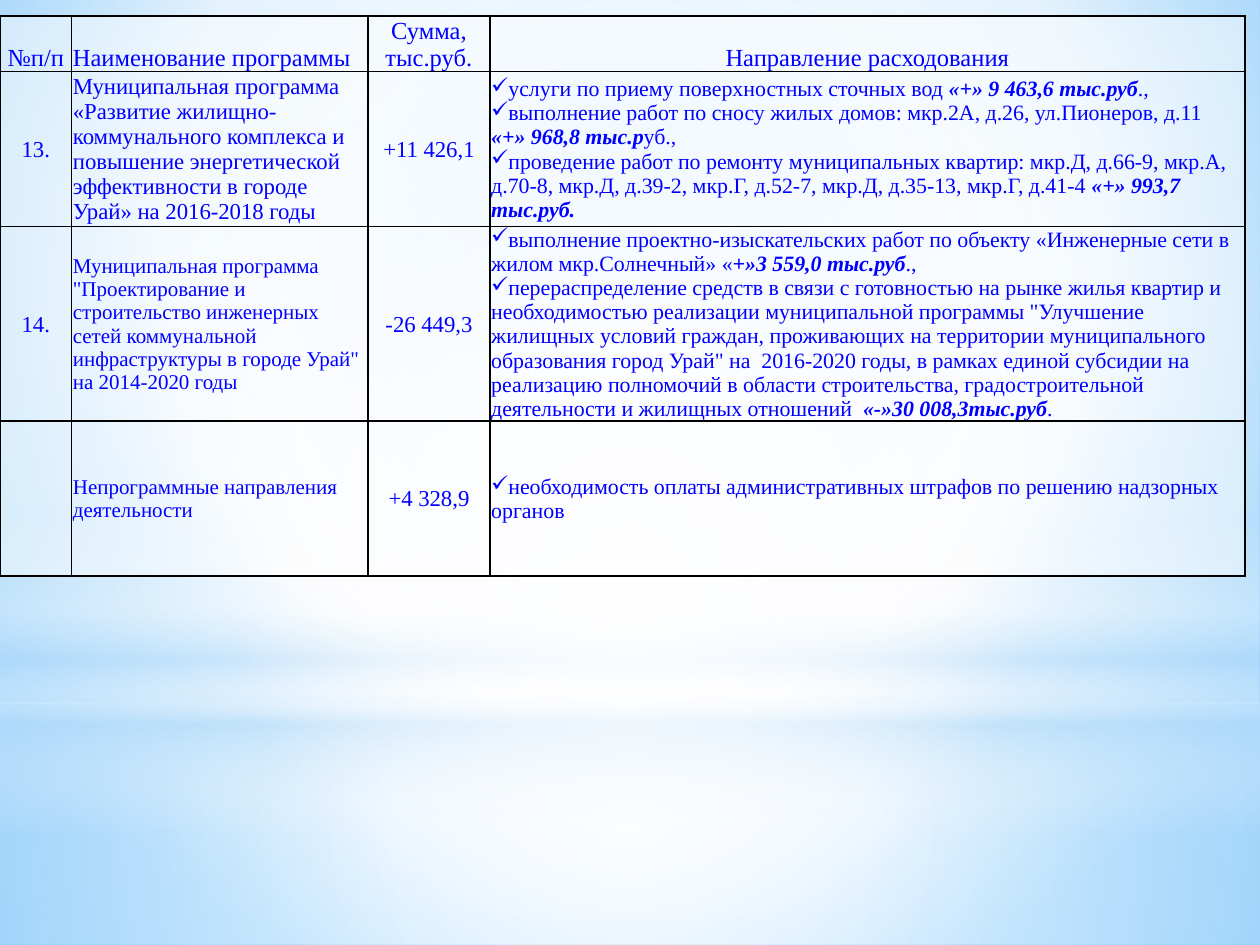
"""Build a budget slide: a table of programme changes on a soft blue backdrop."""
from dataclasses import dataclass

from lxml import etree
from pptx import Presentation
from pptx import util as u
from pptx.dml.color import RGBColor
from pptx.enum import shapes, text
from pptx.oxml import ns

Pt = u.Pt


@dataclass(frozen=True)
class Theme:
    font: str = "Times New Roman"
    ink: str = "0000FF"
    rule: str = "000000"
    white: str = "FFFFFF"
    haze: str = "B4DCFA"
    sky: str = "9ED5FF"
    deep: str = "5BB9FF"
    head: float = 14
    body: float = 13
    note: float = 12.5
    small: float = 12
    veil: int = 46


look = Theme()


def add(node, tag, **attrs):
    """Append a drawing element with the given attributes."""
    return etree.SubElement(node, ns.qn("a:" + tag), {k: str(v) for k, v in attrs.items()})


def blend(fill, root, stops, rect=None):
    """Give a fill a gradient: round within rect, or top to bottom."""
    fill.gradient()
    grad = root.find(".//" + ns.qn("a:gradFill"))
    for child in list(grad):
        grad.remove(child)
    chain = add(grad, "gsLst")
    for spot, tint, alpha in stops:
        color = add(add(chain, "gs", pos=spot * 1000), "srgbClr", val=tint)
        add(color, "alpha", val=alpha * 1000)
    if rect:
        way = add(grad, "path", path="circle")
        add(way, "fillToRect", **{side: part * 1000 for side, part in zip("ltrb", rect)})
    else:
        add(grad, "lin", ang=90 * 60000, scaled=0)


deck = Presentation()
deck.slide_width, deck.slide_height = Pt(720), Pt(540)
slide = deck.slides.add_slide(deck.slide_layouts[6])
blend(slide.background.fill, slide.element,
      [(0, look.sky, 100), (60, look.white, 100), (100, look.deep, 100)], (20, 10, 20, 60))

mid = (50, 50, 50, 50)
box, oval = shapes.MSO_SHAPE.RECTANGLE, shapes.MSO_SHAPE.OVAL
layers = [
    (box, 401.76, 138.24, mid, [(0, look.white, 91), (37, look.white, 76), (100, look.haze, 79)]),
    (box, 0, 401.76, mid, [(0, look.white, 89), (48, look.white, 62), (100, look.haze, 79)]),
    (box, 296.64, 180, None, [(0, look.white, 0), (29, look.white, 30), (45, look.haze, 40),
                              (55, look.white, 26), (65, look.haze, 60), (100, look.white, 0)]),
    (oval, 126, 401.76, mid, [(0, look.white, 100), (56, look.white, 0)]),
]
for kind, top, height, rect, stops in layers:
    layer = slide.shapes.add_shape(kind, 0, Pt(top), Pt(720), Pt(height))
    layer.shadow.inherit = False
    layer.line.fill.background()
    blend(layer.fill, layer.element, stops, rect)

heads = ["№п/п", "Наименование программы", "Сумма, тыс.руб.", "Направление расходования"]
items = [
    ("13.", "Муниципальная программа «Развитие жилищно-коммунального комплекса и повышение "
     "энергетической эффективности в городе Урай» на 2016-2018 годы", look.body, "+11 426,1", [
         ("услуги по приему поверхностных сточных вод ", "«+» 9 463,6 тыс.руб", ".,"),
         ("выполнение работ по сносу жилых домов: мкр.2А, д.26, ул.Пионеров, д.11  ",
          "«+» 968,8 тыс.р", "уб.,"),
         ("проведение работ по ремонту муниципальных квартир: мкр.Д, д.66-9, мкр.А, д.70-8, "
          "мкр.Д, д.39-2, мкр.Г, д.52-7, мкр.Д, д.35-13, мкр.Г, д.41-4 ",
          "«+» 993,7 тыс.руб.")]),
    ("14.", 'Муниципальная программа "Проектирование и строительство инженерных сетей '
     'коммунальной инфраструктуры в городе Урай" на 2014-2020 годы', look.small, "-26 449,3", [
         ("выполнение проектно-изыскательских работ по объекту «Инженерные сети в жилом "
          "мкр.Солнечный» «", "+»3 559,0 тыс.руб", ".,"),
         ("перераспределение средств в связи с готовностью на рынке жилья квартир и "
          'необходимостью реализации муниципальной программы "Улучшение жилищных условий '
          'граждан, проживающих на территории муниципального образования город Урай" на  '
          "2016-2020 годы, в рамках единой субсидии на реализацию полномочий в области "
          "строительства, градостроительной деятельности и жилищных отношений  ",
          "«-»30 008,3тыс.руб", ".")]),
    ("", "Непрограммные направления деятельности", look.small, "+4 328,9", [
        ("необходимость оплаты административных штрафов по решению надзорных органов",)]),
]
rows = [[([(head,)], look.head) for head in heads]]
for mark, name, size, sum_, goals in items:
    rows.append([([(mark,)], look.body), ([(name,)], size),
                 ([(sum_,)], look.body), (goals, look.note)])

wide, tall = [41, 169.2, 69.84, 431.3], [28, 88.56, 88.56, 88.56]
table = slide.shapes.add_table(len(tall), len(wide), 0, Pt(9.2), Pt(sum(wide)), Pt(sum(tall))).table
table.first_row = table.horz_banding = False
for col, width in zip(table.columns, wide):
    col.width = Pt(width)
for row, height in zip(table.rows, tall):
    row.height = Pt(height)

for r, line in enumerate(rows):
    for c, (paras, size) in enumerate(line):
        cell = table.cell(r, c)
        cell.margin_left = cell.margin_right = cell.margin_top = Pt(0.7)
        cell.margin_bottom = 0
        cell.vertical_anchor = text.MSO_ANCHOR.MIDDLE if r else text.MSO_ANCHOR.BOTTOM
        props = cell._tc.get_or_add_tcPr()
        for side in "LRTB":
            edge = add(props, "ln" + side, w=Pt(1))
            add(add(edge, "solidFill"), "srgbClr", val=look.rule)
        cell.fill.solid()
        cell.fill.fore_color.rgb = RGBColor.from_string(look.white)
        add(props.find("a:solidFill/a:srgbClr", props.nsmap), "alpha", val=look.veil * 1000)
        frame = cell.text_frame
        for p, parts in enumerate(paras):
            para = frame.add_paragraph() if p else frame.paragraphs[0]
            left = c == 1 or (r and c == 3)
            para.alignment = text.PP_ALIGN.LEFT if left else text.PP_ALIGN.CENTER
            para.font.name, para.font.size = look.font, Pt(size)
            para.font.color.rgb = RGBColor.from_string(look.ink)
            if r and c == 3:
                bullet = etree.Element(ns.qn("a:buChar"), {"char": "✓"})
                para._p.get_or_add_pPr().insert(0, bullet)
            for n, part in enumerate(parts):
                if part:
                    run = para.add_run()
                    run.text = part
                    if n % 2:
                        run.font.bold = run.font.italic = True

deck.save("out.pptx")
